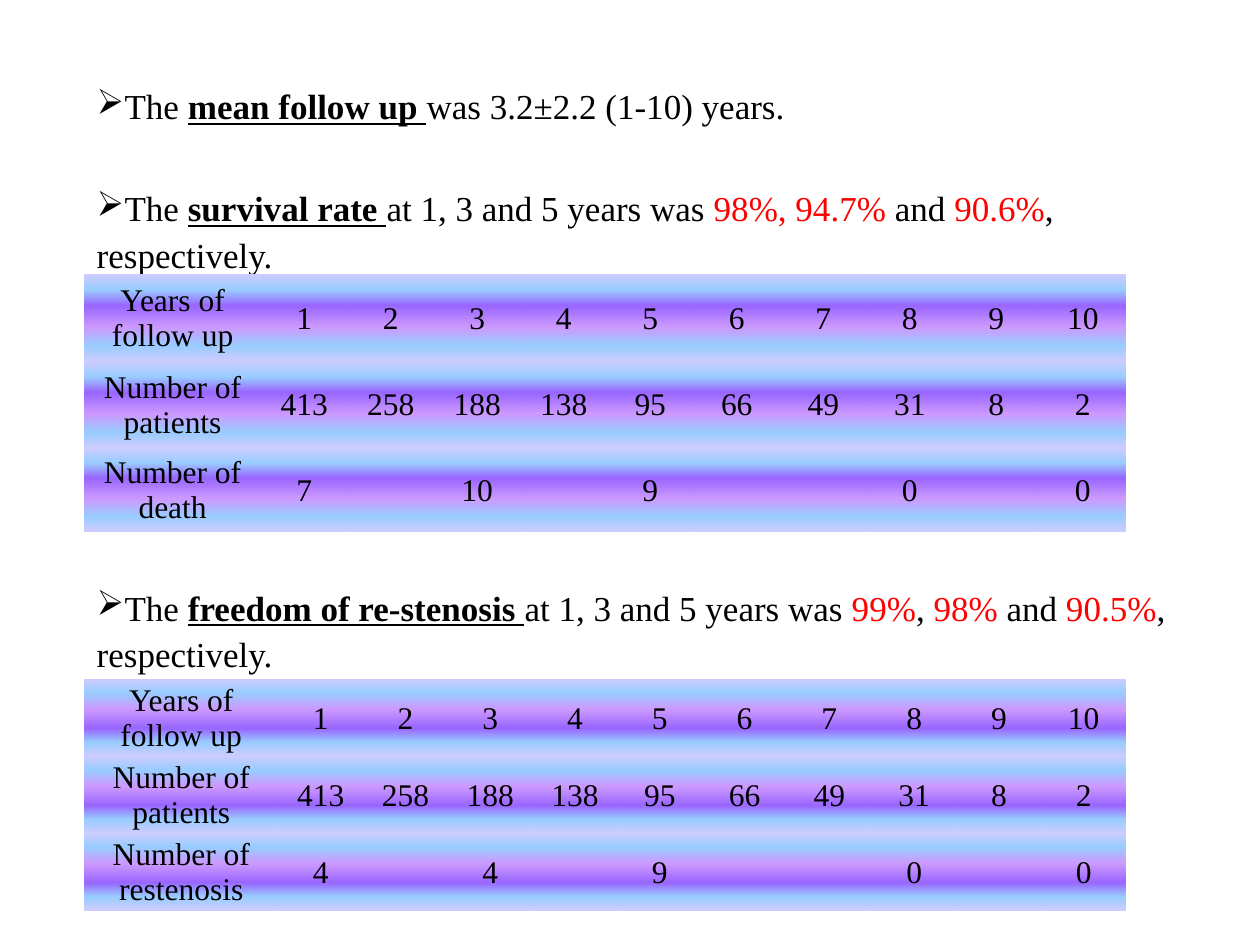
from pptx import Presentation
from pptx.dml.color import RGBColor
from pptx.enum.text import MSO_ANCHOR, PP_ALIGN
from pptx.oxml import parse_xml
from pptx.oxml.ns import nsdecls
from pptx.util import Cm, Pt

CENTER, LEFT = PP_ALIGN.CENTER, PP_ALIGN.LEFT
TOP, MIDDLE = MSO_ANCHOR.TOP, MSO_ANCHOR.MIDDLE
DOWN, UP = 90, 270
NO_STYLE = "{2D5ABB26-0587-4C30-8999-92F81FD0307C}"

THEME = {
    "font": "Times New Roman",
    "finding_size": 20,
    "table_size": 18,
    "ink": "000000",
    "result": "FF0000",
    "bands": [(0, "CCCCFF"), (18, "99CCFF"), (36, "9966FF"),
              (61, "CC99FF"), (82, "99CCFF"), (100, "CCCCFF")],
}
STYLES = {
    "plain": {"bold": False, "underline": False, "color": THEME["ink"]},
    "topic": {"bold": True, "underline": True, "color": THEME["ink"]},
    "result": {"bold": False, "underline": False, "color": THEME["result"]},
}
CELL_FORMAT = {"margin_left": Cm(0.03), "margin_right": Cm(0.03),
               "margin_top": Cm(0.03), "margin_bottom": 0,
               "vertical_anchor": MIDDLE}

LEFT_EDGE, TABLE_WIDTH = 1.7, 21

# Each finding: top, width, height in cm, then spans of (text, style)
FINDINGS = [
    (1.5, 20.4, 1.12, [
        ("The ", "plain"), ("mean follow up ", "topic"),
        ("was 3.2±2.2 (1-10) years.", "plain")]),
    (3.56, 20.8, 1.96, [
        ("The ", "plain"), ("survival rate ", "topic"),
        ("at 1, 3 and 5 years was ", "plain"), ("98%, 94.7% ", "result"),
        ("and ", "plain"), ("90.6%", "result"), (", respectively.", "plain")]),
    (11.61, 22.2, 1.96, [
        ("The ", "plain"), ("freedom of re-stenosis ", "topic"),
        ("at 1, 3 and 5 years was ", "plain"), ("99%", "result"),
        (", ", "plain"), ("98%", "result"), (" and ", "plain"),
        ("90.5%", "result"), (", respectively.", "plain")]),
]

FOLLOW_UP = [
    ["Years of follow up", *range(1, 11)],
    ["Number of patients", 413, 258, 188, 138, 95, 66, 49, 31, 8, 2],
]
DEATHS = ["Number of death", 7, "", 10, "", 9, "", "", 0, "", 0]
RESTENOSES = ["Number of restenosis", 4, "", 4, "", 9, "", "", 0, "", 0]

TABLES = [
    {"top": 5.53, "label_width": 3.56, "row_heights": [1.75, 1.75, 1.68],
     "angle": DOWN, "rows": FOLLOW_UP + [DEATHS]},
    {"top": 13.69, "label_width": 3.91, "row_heights": [1.55, 1.55, 1.55],
     "angle": UP, "rows": FOLLOW_UP + [RESTENOSES]},
]


def set_all(target, values):
    for name, value in values.items():
        setattr(target, name, value)


def add_span(para, text, size, style):
    span = para.add_run()
    span.text = text
    values = STYLES[style]
    set_all(span.font, {"name": THEME["font"], "size": Pt(size),
                        "bold": values["bold"],
                        "underline": values["underline"]})
    span.font.color.rgb = RGBColor.from_string(values["color"])


def add_finding(page, top, width, height, spans):
    box = page.shapes.add_textbox(Cm(LEFT_EDGE), Cm(top), Cm(width), Cm(height))
    set_all(box.text_frame, {"word_wrap": True, "vertical_anchor": TOP})
    para = box.text_frame.paragraphs[0]
    set_all(para, {"alignment": LEFT, "line_spacing": 1.1})
    para._p.get_or_add_pPr().append(
        parse_xml(f'<a:buChar {nsdecls("a")} char="➢"/>'))
    for text, style in spans:
        add_span(para, text, THEME["finding_size"], style)


def band_fill(angle):
    """Return the many-stop gradient, which fill.gradient() cannot make."""
    stops = "".join(
        f'<a:gs pos="{percent * 1000}"><a:srgbClr val="{color}"/></a:gs>'
        for percent, color in THEME["bands"])
    return parse_xml(
        f'<a:gradFill {nsdecls("a")} rotWithShape="1"><a:gsLst>{stops}</a:gsLst>'
        f'<a:lin ang="{angle * 60000}" scaled="1"/></a:gradFill>')


def add_follow_up_table(page, top, label_width, row_heights, angle, rows):
    frame = page.shapes.add_table(
        len(rows), len(rows[0]), Cm(LEFT_EDGE), Cm(top),
        Cm(TABLE_WIDTH), Cm(sum(row_heights)))
    table = frame.table
    set_all(table, {"first_row": False, "horz_banding": False})
    table._tbl.tblPr[0].text = NO_STYLE
    year_width = (TABLE_WIDTH - label_width) / (len(rows[0]) - 1)
    for index, column in enumerate(table.columns):
        column.width = Cm(year_width if index else label_width)
    for row, height, values in zip(table.rows, row_heights, rows):
        row.height = Cm(height)
        for cell, value in zip(row.cells, values):
            set_all(cell, CELL_FORMAT)
            cell._tc.get_or_add_tcPr().append(band_fill(angle))
            para = cell.text_frame.paragraphs[0]
            para.alignment = CENTER
            if value != "":
                add_span(para, str(value), THEME["table_size"], "plain")


def main():
    deck = Presentation()
    set_all(deck, {"slide_width": Cm(25.4), "slide_height": Cm(19.05)})
    page = deck.slides.add_slide(deck.slide_layouts[6])
    for finding in FINDINGS:
        add_finding(page, *finding)
    for table in TABLES:
        add_follow_up_table(page, **table)
    deck.save("out.pptx")


if __name__ == "__main__":
    main()
